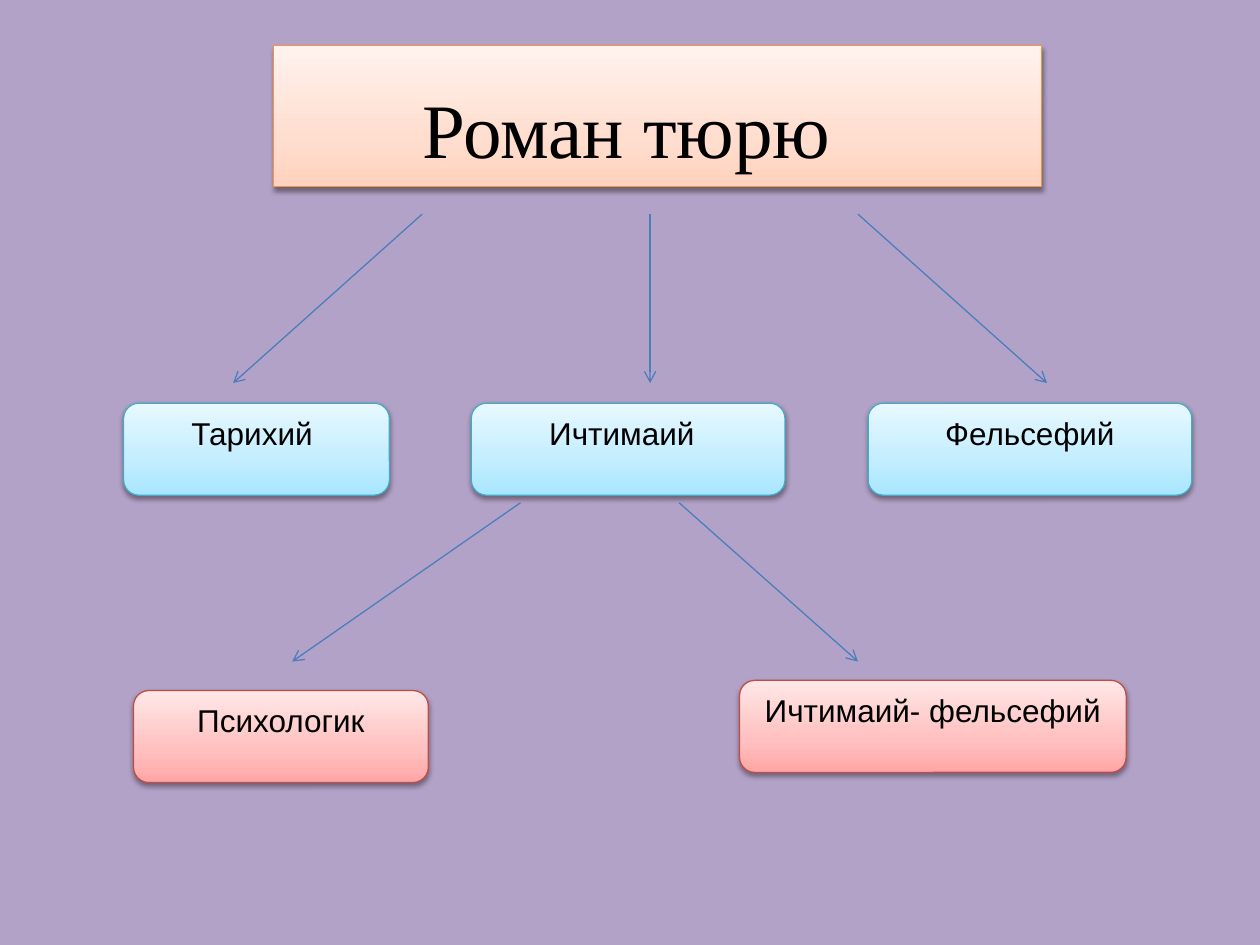
"""Build a slide with a tree diagram of novel types."""
from copy import deepcopy

from lxml import etree
from pptx import Presentation
from pptx.dml.color import RGBColor
from pptx.enum.shapes import MSO_CONNECTOR, MSO_SHAPE
from pptx.enum.text import MSO_ANCHOR, PP_ALIGN
from pptx.oxml.ns import qn
from pptx.util import Pt

RECTANGLE = MSO_SHAPE.RECTANGLE
ROUNDED = MSO_SHAPE.ROUNDED_RECTANGLE
STRAIGHT = MSO_CONNECTOR.STRAIGHT
LEFT, CENTER = PP_ALIGN.LEFT, PP_ALIGN.CENTER
TOP = MSO_ANCHOR.TOP

LILAC = RGBColor(0xB3, 0xA2, 0xC7)
BLACK = RGBColor(0x00, 0x00, 0x00)
ARROW_BLUE = RGBColor(0x4B, 0x7E, 0xBC)
AQUA_LINE = RGBColor(0x46, 0xAA, 0xC5)
RED_LINE = RGBColor(0xBF, 0x4C, 0x48)
ORANGE_LINE = RGBColor(0xF6, 0x92, 0x40)
AQUA = (RGBColor(0xA7, 0xE6, 0xFF), RGBColor(0xC1, 0xED, 0xFF), RGBColor(0xE7, 0xF8, 0xFF))
RED = (RGBColor(0xFF, 0xA6, 0xA5), RGBColor(0xFF, 0xC0, 0xBF), RGBColor(0xFF, 0xE7, 0xE7))
ORANGE = (RGBColor(0xFF, 0xD2, 0xBD), RGBColor(0xFF, 0xDE, 0xD0), RGBColor(0xFF, 0xF2, 0xED))
STOP_POSITIONS = (0, 0.35, 1)

TYPE_TOP, TYPE_HEIGHT = 230.4, 52.6
TYPES = (("Тарихий ", 70.6, 151.9, {}),
         ("Ичтимаий", 269.3, 179.3, {"align": LEFT, "left_inset": 42}),
         ("Фельсефий", 496.1, 185, {}))
SUBTYPES = (("Психологик", 76.3, 394.6, 168.5),
            ("Ичтимаий- фельсефий", 422.6, 388.8, 221))
TITLE_ARROWS = ((241.2, 133.2), (371.5, 371.5), (490.3, 598.3))
SUBTYPE_ARROWS = ((297.4, 167), (388.1, 490.3))


def write_text(shape, text, font="Arial", size=18, color=BLACK, align=CENTER,
               left_inset=7.2, top_inset=3.6):
    frame = shape.text_frame
    frame.word_wrap = True
    frame.vertical_anchor = TOP
    frame.margin_left, frame.margin_top = Pt(left_inset), Pt(top_inset)
    paragraph = frame.paragraphs[0]
    paragraph.alignment = align
    run = paragraph.add_run()
    run.text = text
    run.font.name, run.font.size = font, Pt(size)
    run.font.color.rgb = color


class Diagram:
    def __init__(self, slide, line_width=0.75):
        self.slide = slide
        self.line_width = Pt(line_width)

    def background(self, color):
        fill = self.slide.background.fill
        fill.solid()
        fill.fore_color.rgb = color

    def box(self, kind, left, top, width, height, colors, line_color):
        shape = self.slide.shapes.add_shape(kind, Pt(left), Pt(top), Pt(width), Pt(height))
        shape.line.color.rgb = line_color
        shape.line.width = self.line_width
        self.gradient(shape, colors)
        self.shadow(shape)
        return shape

    def gradient(self, shape, colors):
        shape.fill.gradient()
        shape.fill.gradient_angle = 90
        stops = next(shape._element.spPr.iter(qn("a:gsLst")))
        stops.append(deepcopy(stops[-1]))
        for stop, position, color in zip(shape.fill.gradient_stops, STOP_POSITIONS, colors):
            stop.position = position
            stop.color.rgb = color

    def shadow(self, shape):
        shape.shadow.inherit = False
        effects = shape._element.spPr.find(qn("a:effectLst"))
        outer = etree.SubElement(effects, qn("a:outerShdw"), blurRad=str(Pt(3.1)),
                                 dist=str(Pt(1.6)), dir="5400000", rotWithShape="0")
        color = etree.SubElement(outer, qn("a:srgbClr"), val=str(BLACK))
        etree.SubElement(color, qn("a:alpha"), val="38000")

    def text_box(self, left, top, width, height, text, **text_format):
        shape = self.slide.shapes.add_textbox(Pt(left), Pt(top), Pt(width), Pt(height))
        write_text(shape, text, **text_format)

    def arrow(self, start_x, start_y, end_x, end_y):
        connector = self.slide.shapes.add_connector(
            STRAIGHT, Pt(start_x), Pt(start_y), Pt(end_x), Pt(end_y))
        connector.line.color.rgb = ARROW_BLUE
        connector.line.width = self.line_width
        properties = connector._element.spPr
        etree.SubElement(properties.find(qn("a:ln")), qn("a:tailEnd"), type="arrow")
        etree.SubElement(properties, qn("a:effectLst"))


def main():
    presentation = Presentation()
    presentation.slide_width, presentation.slide_height = Pt(720), Pt(540)
    diagram = Diagram(presentation.slides.add_slide(presentation.slide_layouts[6]))
    diagram.background(LILAC)

    for text, left, width, text_format in TYPES:
        box = diagram.box(ROUNDED, left, TYPE_TOP, width, TYPE_HEIGHT, AQUA, AQUA_LINE)
        write_text(box, text, **text_format)
    for text, left, top, width in SUBTYPES:
        box = diagram.box(ROUNDED, left, top, width, TYPE_HEIGHT, RED, RED_LINE)
        write_text(box, text)

    diagram.box(RECTANGLE, 156.2, 25.9, 439.2, 80.6, ORANGE, ORANGE_LINE)
    diagram.text_box(144.7, 37.4, 437.8, 90, "Роман тюрю ",
                     font="Times New Roman", size=44, top_inset=9)

    for start_x, end_x in TITLE_ARROWS:
        diagram.arrow(start_x, 122.4, end_x, 218.9)
    for start_x, end_x in SUBTYPE_ARROWS:
        diagram.arrow(start_x, 287.3, end_x, 378)

    presentation.save("out.pptx")


if __name__ == "__main__":
    main()
